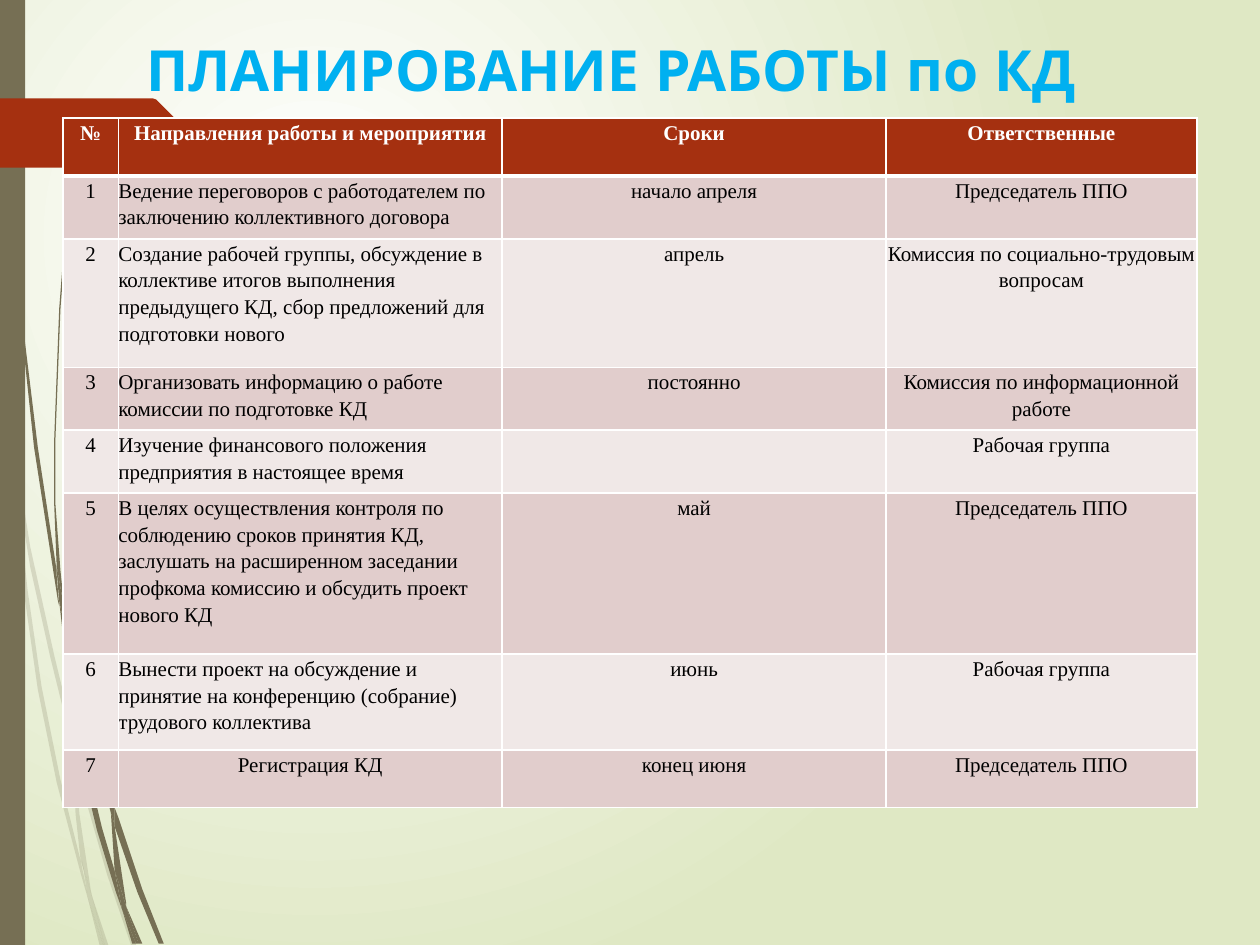
from collections import namedtuple

from lxml import etree
from pptx import Presentation
from pptx.dml.color import RGBColor
from pptx.enum.shapes import MSO_SHAPE
from pptx.enum.text import MSO_ANCHOR, PP_ALIGN
from pptx.oxml.ns import qn
from pptx.util import Emu, Inches, Pt

RECTANGLE = MSO_SHAPE.RECTANGLE
CENTER, LEFT, MIDDLE = PP_ALIGN.CENTER, PP_ALIGN.LEFT, MSO_ANCHOR.MIDDLE

WHITE = RGBColor(0xFF, 0xFF, 0xFF)
BLACK = RGBColor(0, 0, 0)
MEADOW = RGBColor(0xDF, 0xE8, 0xC4)
OLIVE = RGBColor(0x76, 0x6F, 0x54)
RUST = RGBColor(0xA5, 0x30, 0x10)
SKY = RGBColor(0x00, 0xB0, 0xF0)
BANDS = [RGBColor(0xF0, 0xE8, 0xE7), RGBColor(0xE1, 0xCD, 0xCC)]

GRID_COLUMNS = 1000
Box = namedtuple("Box", "left top width height")

PALE_BLADES = [
    [(8, 350), (6, 322), (0, 282), (0, 299), (7, 344)],
    [(40, 522), (59, 599), (59, 586), (43, 520), (24, 434), (10, 345), (12, 376), (24, 450)],
    [(64, 607), (61, 596), (61, 610), (85, 694), (104, 750), (108, 750), (88, 692)],
    [(83, 750), (86, 750), (73, 711)],
    [(64, 683), (48, 619), (33, 545), (22, 469), (12, 376), (8, 350), (12, 410), (19, 470),
     (30, 547), (45, 621), (64, 693), (70, 714), (69, 707)],
    [(58, 599), (60, 646), (64, 683), (67, 692), (73, 711), (72, 706), (63, 646), (61, 610),
     (61, 608)],
    [(61, 584), (66, 522), (76, 462), (91, 404), (111, 349), (134, 295), (159, 245), (187, 198),
     (201, 175), (217, 154), (217, 153), (201, 175), (186, 197), (158, 244), (133, 294),
     (110, 348), (90, 403), (75, 461), (64, 522), (59, 584), (59, 586), (61, 596)],
    [(70, 714), (79, 750), (82, 750)],
    [(61, 608), (61, 610), (61, 596), (59, 586), (58, 599)],
    [(67, 692), (65, 683), (69, 707), (70, 714), (82, 750), (83, 750), (73, 711)],
]
DARK_BLADES = [
    [(5, 110), (14, 233), (27, 355), (46, 477), (47, 481), (45, 457), (45, 453), (30, 355),
     (15, 232), (6, 109), (4, 48), (3, 0), (2, 0), (3, 48)],
    [(73, 592), (88, 645), (88, 633), (88, 631), (77, 590), (62, 532), (50, 472), (53, 505),
     (62, 549)],
    [(94, 649), (91, 641), (91, 656), (109, 708), (126, 749), (130, 749), (113, 706)],
    [(91, 691), (81, 657), (69, 607), (60, 556), (53, 505), (47, 477), (56, 557), (65, 609),
     (77, 659), (92, 708), (97, 722), (96, 717)],
    [(50, 472), (48, 453), (44, 400), (44, 349), (48, 245), (52, 193), (58, 141), (51, 193),
     (47, 245), (43, 349), (43, 400), (45, 449), (49, 472)],
    [(110, 749), (113, 749), (100, 719)],
    [(47, 477), (53, 505), (50, 472), (49, 472), (45, 449), (45, 453)],
    [(91, 633), (95, 592), (103, 552), (116, 513), (131, 476), (149, 440), (169, 406),
     (191, 374), (203, 359), (216, 344), (215, 344), (203, 358), (191, 373), (168, 405),
     (148, 439), (129, 474), (114, 512), (101, 551), (92, 591), (88, 631), (91, 641)],
    [(97, 722), (105, 749), (108, 749)],
    [(88, 645), (91, 691), (96, 706), (100, 719), (100, 716), (91, 656), (90, 651)],
    [(88, 645), (90, 651), (91, 656), (91, 641), (88, 631), (88, 633)],
    [(96, 706), (91, 691), (96, 717), (97, 722), (108, 749), (110, 749), (100, 719)],
]
TAB = [(0, 0), (121, 0), (124, 1), (149, 26), (149, 29), (124, 54), (121, 55), (0, 55)]

HEADINGS = ["№", "Направления работы и мероприятия", "Сроки", "Ответственные"]
ACTIVITIES = [
    ("Ведение переговоров с работодателем по заключению коллективного договора",
     "начало апреля", "Председатель ППО"),
    ("Создание рабочей группы, обсуждение в коллективе итогов выполнения предыдущего КД, "
     "сбор предложений для подготовки нового",
     "апрель", "Комиссия по социально-трудовым вопросам"),
    ("Организовать информацию о работе комиссии по подготовке КД",
     "постоянно", "Комиссия по информационной работе"),
    ("Изучение финансового положения предприятия в настоящее время",
     "", "Рабочая группа"),
    ("В целях осуществления контроля по соблюдению сроков принятия КД, заслушать на "
     "расширенном заседании профкома комиссию и обсудить проект нового КД",
     "май", "Председатель ППО"),
    ("Вынести проект на обсуждение и принятие на конференцию (собрание) трудового коллектива",
     "июнь", "Рабочая группа"),
    ("Регистрация КД", "конец июня", "Председатель ППО"),
]
COLUMN_SHARES = [0.44, 3.05, 3.05, 2.47]
ROW_SHARES = [0.46, 0.5, 1.02, 0.5, 0.5, 1.28, 0.76, 0.46]


def share(box, left, top, width, height):
    """Return the part of a box given by shares of its size."""
    return Box(Emu(int(box.left + left * box.width)), Emu(int(box.top + top * box.height)),
               Emu(int(width * box.width)), Emu(int(height * box.height)))


def paint(shape, color):
    """Give a shape a plain fill with neither line nor shadow."""
    shape.shadow.inherit = False
    shape.fill.solid()
    shape.fill.fore_color.rgb = color
    shape.line.fill.background()


def add_outline(shapes, points, box, unit, color):
    """Draw a closed outline from grid points inside a box."""
    builder = shapes.build_freeform(*points[0], scale=unit)
    builder.add_line_segments(points[1:], close=True)
    outline = builder.convert_to_shape(box.left, box.top)
    paint(outline, color)
    return outline


def add_backdrop(slide):
    """Fill the background with a round gradient from white to green."""
    fill = slide.background.fill
    fill.gradient()
    for stop, color in zip(fill.gradient_stops, (WHITE, MEADOW)):
        stop.color.rgb = color
    gradient = slide.element.find(".//" + qn("a:gradFill"))
    gradient.remove(gradient.find(qn("a:lin")))
    circle = etree.SubElement(gradient, qn("a:path"), path="circle")
    etree.SubElement(circle, qn("a:fillToRect"), l="50000", t="50000", r="100000", b="100000")


def add_grass(slide, box, blades, opacity):
    """Draw a group of grass blades."""
    grass = slide.shapes.add_group_shape()
    for points in blades:
        blade = add_outline(grass.shapes, points, box, box.width / GRID_COLUMNS, OLIVE)
        color = blade.fill._xPr.find(qn("a:solidFill"))[0]
        etree.SubElement(color, qn("a:alpha"), val=str(opacity * 1000))


def add_edge(slide, box):
    """Draw the side strip and the pointed tab."""
    strip = slide.shapes.add_shape(RECTANGLE, *share(box, 0, 0, 0.02, 1))
    paint(strip, OLIVE)
    add_outline(slide.shapes, TAB, share(box, 0, 0.104, 0.15, 0.07),
                box.width / GRID_COLUMNS, RUST)


def add_title(slide, box):
    """Write the slide title."""
    frame = slide.shapes.add_textbox(*box).text_frame
    frame.word_wrap = True
    frame.vertical_anchor = MIDDLE
    frame.text = "ПЛАНИРОВАНИЕ РАБОТЫ по КД"
    heading = frame.paragraphs[0]
    heading.alignment = CENTER
    font = heading.runs[0].font
    font.name, font.size, font.bold = "Quicksand", Pt(32.4), True
    font.color.rgb = SKY


def add_borders(cell, widths):
    """Draw white cell borders with widths in points by side."""
    properties = cell._tc.get_or_add_tcPr()
    for side, width in widths.items():
        line = etree.SubElement(properties, qn("a:ln" + side), w=str(Pt(width)))
        solid = etree.SubElement(line, qn("a:solidFill"))
        etree.SubElement(solid, qn("a:srgbClr"), val=str(WHITE))


def fill_cell(cell, text, fill, ink, bold, alignment, widths):
    """Write and style one table cell."""
    cell.margin_left = cell.margin_right = cell.margin_top = cell.margin_bottom = 0
    add_borders(cell, widths)
    cell.fill.solid()
    cell.fill.fore_color.rgb = fill
    cell.text = text
    paragraph = cell.text_frame.paragraphs[0]
    paragraph.alignment = alignment
    paragraph.line_spacing = 1.15
    paragraph.space_after = Pt(10)
    for run in paragraph.runs:
        run.font.name, run.font.size, run.font.bold = "Times New Roman", Pt(12), bold
        run.font.color.rgb = ink


def add_plan(slide, box):
    """Build the table of activities, dates and people in charge."""
    rows = [HEADINGS] + [(str(n), *entry) for n, entry in enumerate(ACTIVITIES, 1)]
    plan = slide.shapes.add_table(len(rows), len(HEADINGS), *box).table
    for column, part in zip(plan.columns, COLUMN_SHARES):
        column.width = int(box.width * part / sum(COLUMN_SHARES))
    for row, part in zip(plan.rows, ROW_SHARES):
        row.height = int(box.height * part / sum(ROW_SHARES))
    for r, row in enumerate(rows):
        header = r == 0
        widths = {"L": 1, "R": 1, "T": 3 if r == 1 else 1, "B": 3 if header else 1}
        for c, text in enumerate(row):
            task = c == 1 and 0 < r < len(rows) - 1
            fill_cell(plan.cell(r, c), text, RUST if header else BANDS[r % 2],
                      WHITE if header else BLACK, header, LEFT if task else CENTER, widths)


def main():
    """Build and save the slide."""
    deck = Presentation()
    deck.slide_width, deck.slide_height = Inches(10), Inches(7.5)
    slide = deck.slides.add_slide(deck.slide_layouts[6])
    page = Box(0, 0, deck.slide_width, deck.slide_height)
    add_backdrop(slide)
    add_grass(slide, page, PALE_BLADES, 20)
    add_grass(slide, page, DARK_BLADES, 100)
    add_edge(slide, page)
    add_title(slide, share(page, 0.045, 0.005, 0.88, 0.135))
    add_plan(slide, share(page, 0.05, 0.125, 0.9, 0.73))
    deck.save("out.pptx")


if __name__ == "__main__":
    main()
